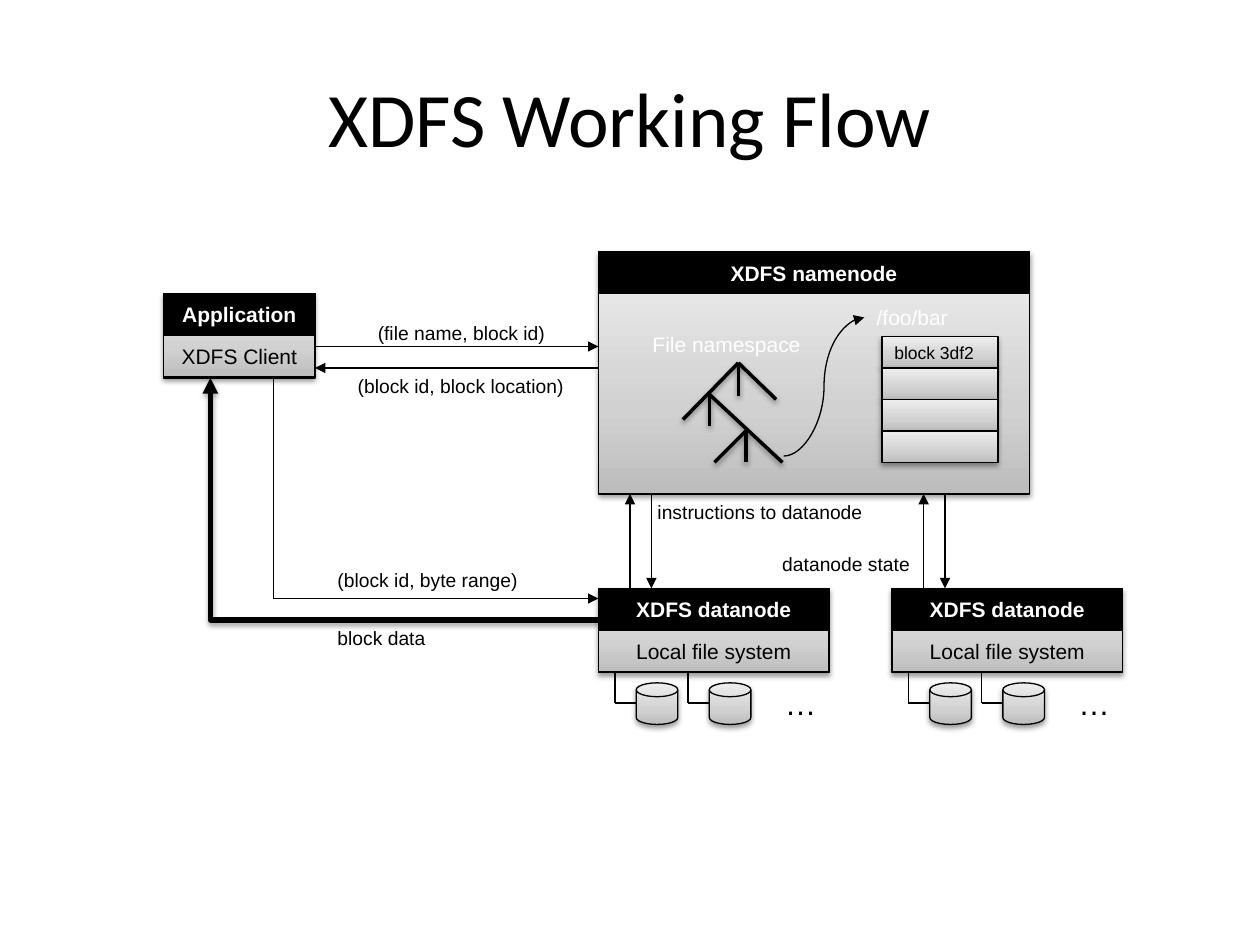
import pptx
import pptx.util
import pptx.dml.color
import pptx.enum.shapes
import pptx.enum.text
import pptx.oxml
import pptx.oxml.ns

Inches, Pt = pptx.util.Inches, pptx.util.Pt
RGBColor = pptx.dml.color.RGBColor
MSO_SHAPE = pptx.enum.shapes.MSO_SHAPE
MSO_CONNECTOR = pptx.enum.shapes.MSO_CONNECTOR
PP_ALIGN = pptx.enum.text.PP_ALIGN
MSO_ANCHOR = pptx.enum.text.MSO_ANCHOR
qn = pptx.oxml.ns.qn

BLACK = RGBColor(0x00, 0x00, 0x00)
WHITE = RGBColor(0xFF, 0xFF, 0xFF)
GRAY_STOPS = (
    (0, RGBColor(0xBD, 0xBD, 0xBD)),
    (35, RGBColor(0xD1, 0xD1, 0xD1)),
    (100, RGBColor(0xEE, 0xEE, 0xEE)),
)
TEXT_HEIGHTS = {11: 0.29, 12: 0.3, 18: 0.4}
ROW = 0.33


def add_xml(parent, body):
    """Append a DrawingML element to a parent element."""
    ns = pptx.oxml.ns.nsdecls("a")
    parent.append(pptx.oxml.parse_xml(body.replace(">", f" {ns}>", 1)))


def set_effect(s, shadow):
    """Give a shape or connector a soft shadow below it, or none."""
    inner = ""
    if shadow:
        inner = (
            f'<a:outerShdw blurRad="{Pt(3.1)}" dist="{Pt(1.6)}" dir="5400000" '
            'rotWithShape="0"><a:srgbClr val="000000"><a:alpha val="38000"/>'
            "</a:srgbClr></a:outerShdw>"
        )
    add_xml(s._element.spPr, f"<a:effectLst>{inner}</a:effectLst>")


def set_gradient(s):
    """Fill a shape with gray that darkens towards the bottom."""
    s.fill.gradient()
    s.fill.gradient_angle = 90
    stops = s._element.spPr.find(qn("a:gradFill")).find(qn("a:gsLst"))
    for stop in list(stops):
        stops.remove(stop)
    for pos, color in GRAY_STOPS:
        add_xml(stops, f'<a:gs pos="{pos * 1000}"><a:srgbClr val="{color}"/></a:gs>')


def format_text(tf, text, size, color=BLACK, bold=False, align=None, font="Arial"):
    """Set the text of a frame and format its run."""
    tf.text = text
    p = tf.paragraphs[0]
    p.alignment = align
    r = p.runs[0]
    r.font.name = font
    r.font.size = Pt(size)
    r.font.bold = bold
    r.font.color.rgb = color


def add_shape(shapes, x, y, w, h, kind=MSO_SHAPE.RECTANGLE):
    """Add an outlined shape without a fill."""
    s = shapes.add_shape(kind, Inches(x), Inches(y), Inches(w), Inches(h))
    s.fill.background()
    s.line.color.rgb = BLACK
    s.line.width = Pt(0.75)
    s.text_frame.vertical_anchor = MSO_ANCHOR.MIDDLE
    return s


def add_panel(shapes, x, y, w, h, kind=MSO_SHAPE.RECTANGLE):
    """Add a gray gradient shape with a shadow."""
    s = add_shape(shapes, x, y, w, h, kind)
    set_gradient(s)
    set_effect(s, True)
    return s


def add_header(shapes, x, y, w, text):
    """Add a black bar with bold white text."""
    s = add_shape(shapes, x, y, w, ROW)
    s.fill.solid()
    s.fill.fore_color.rgb = BLACK
    set_effect(s, False)
    format_text(s.text_frame, text, 12, WHITE, True, PP_ALIGN.CENTER)


def add_node(shapes, x, y, w, header, body):
    """Add a two-row box with a header and a body."""
    add_panel(shapes, x, y, w, 0.67)
    add_header(shapes, x, y, w, header)
    s = add_shape(shapes, x, y + ROW, w, ROW)
    set_effect(s, False)
    format_text(s.text_frame, body, 12, align=PP_ALIGN.CENTER)


def add_label(shapes, x, y, w, text, size=11, color=BLACK):
    """Add a one-line text box."""
    s = shapes.add_textbox(Inches(x), Inches(y), Inches(w), Inches(TEXT_HEIGHTS[size]))
    tf = s.text_frame
    tf.word_wrap = False
    tf.auto_size = pptx.enum.text.MSO_AUTO_SIZE.SHAPE_TO_FIT_TEXT
    format_text(tf, text, size, color)


def add_line(shapes, start, end, width=0.75, arrow=False, shadow=False,
             kind=MSO_CONNECTOR.STRAIGHT):
    """Add a black connector between two points."""
    s = shapes.add_connector(kind, *(Inches(v) for v in (*start, *end)))
    s.line.color.rgb = BLACK
    s.line.width = Pt(width)
    if arrow:
        add_xml(s._element.spPr.find(qn("a:ln")), '<a:tailEnd type="triangle"></a:tailEnd>')
    set_effect(s, shadow)
    return s


def add_datanode(shapes, x):
    """Add a grouped datanode with its disks and its links to the namenode."""
    group = shapes.add_group_shape().shapes
    add_node(group, x, 4.67, 1.83, "XDFS datanode", "Local file system")
    for disk_x in (x + 0.3, x + 0.88):
        add_panel(group, disk_x, 5.42, 0.33, 0.33, MSO_SHAPE.FLOWCHART_MAGNETIC_DISK)
        corner = (disk_x - 0.17, 5.58)
        add_line(group, (disk_x - 0.17, 5.33), corner)
        add_line(group, corner, (disk_x, 5.58))
    add_label(group, x + 1.38, 5.38, 0.45, "…", 18)
    add_line(group, (x + 0.42, 3.92), (x + 0.42, 4.67), arrow=True)
    add_line(group, (x + 0.25, 4.67), (x + 0.25, 3.92), arrow=True)


def add_namenode(shapes):
    """Add the namenode with its namespace tree and block list."""
    add_panel(shapes, 4.75, 2, 3.42, 1.92)
    add_header(shapes, 4.75, 2, 3.42, "XDFS namenode")
    add_label(shapes, 5.08, 2.58, 1.39, "File namespace", 12, WHITE)
    add_label(shapes, 6.86, 2.37, 0.77, "/foo/bar", 12, WHITE)
    root, child, leaf = (5.86, 2.88), (5.63, 3.13), (5.92, 3.42)
    branches = (
        (root, (5.42, 3.33)), (root, (6.16, 3.17)), (root, (5.86, 3.14)),
        (child, (5.63, 3.38)), (child, (6.21, 3.67)),
        (leaf, (5.92, 3.67)), (leaf, (5.67, 3.67)),
    )
    for start, end in branches:
        add_line(shapes, start, end, 2, shadow=True)
    add_line(shapes, (6.22, 3.62), (6.86, 2.52), arrow=True, kind=MSO_CONNECTOR.CURVE)
    blocks = [add_panel(shapes, 7, 2.67 + 0.25 * i, 0.92, 0.25) for i in range(4)]
    format_text(blocks[0].text_frame, "block 3df2", 10, align=PP_ALIGN.LEFT)


def add_flows(shapes):
    """Add the requests and replies between client and servers."""
    add_line(shapes, (2.5, 2.75), (4.75, 2.75), arrow=True)
    add_line(shapes, (4.75, 2.92), (2.5, 2.92), arrow=True)
    add_line(shapes, (2.17, 4.75), (2.17, 3))
    add_line(shapes, (2.17, 4.75), (4.75, 4.75), arrow=True)
    s = add_line(shapes, (4.75, 4.92), (1.67, 3), 3, True, True, MSO_CONNECTOR.ELBOW)
    s._element.spPr.find(qn("a:prstGeom")).set("prst", "bentConnector2")
    labels = (
        (2.9, 2.5, 1.54, "(file name, block id)"),
        (2.74, 2.92, 1.85, "(block id, block location)"),
        (5.12, 3.92, 1.84, "instructions to datanode"),
        (6.11, 4.33, 1.22, "datanode state"),
        (2.58, 4.46, 1.64, "(block id, byte range)"),
        (2.58, 4.92, 0.9, "block data"),
    )
    for label in labels:
        add_label(shapes, *label)


def main():
    """Build the slide and save it."""
    prs = pptx.Presentation()
    prs.slide_width, prs.slide_height = Inches(10), Inches(7.5)
    slide = prs.slides.add_slide(prs.slide_layouts[5])
    title = slide.shapes.title
    title.left, title.top = Inches(0.5), Inches(0.3)
    title.width, title.height = Inches(9), Inches(1.25)
    title.text_frame.vertical_anchor = MSO_ANCHOR.MIDDLE
    format_text(title.text_frame, "XDFS Working Flow", 44, align=PP_ALIGN.CENTER,
                font="Calibri")
    add_node(slide.shapes, 1.3, 2.33, 1.2, "Application", "XDFS Client")
    add_flows(slide.shapes)
    add_namenode(slide.shapes)
    for x in (4.75, 7.08):
        add_datanode(slide.shapes, x)
    prs.save("out.pptx")


if __name__ == "__main__":
    main()
